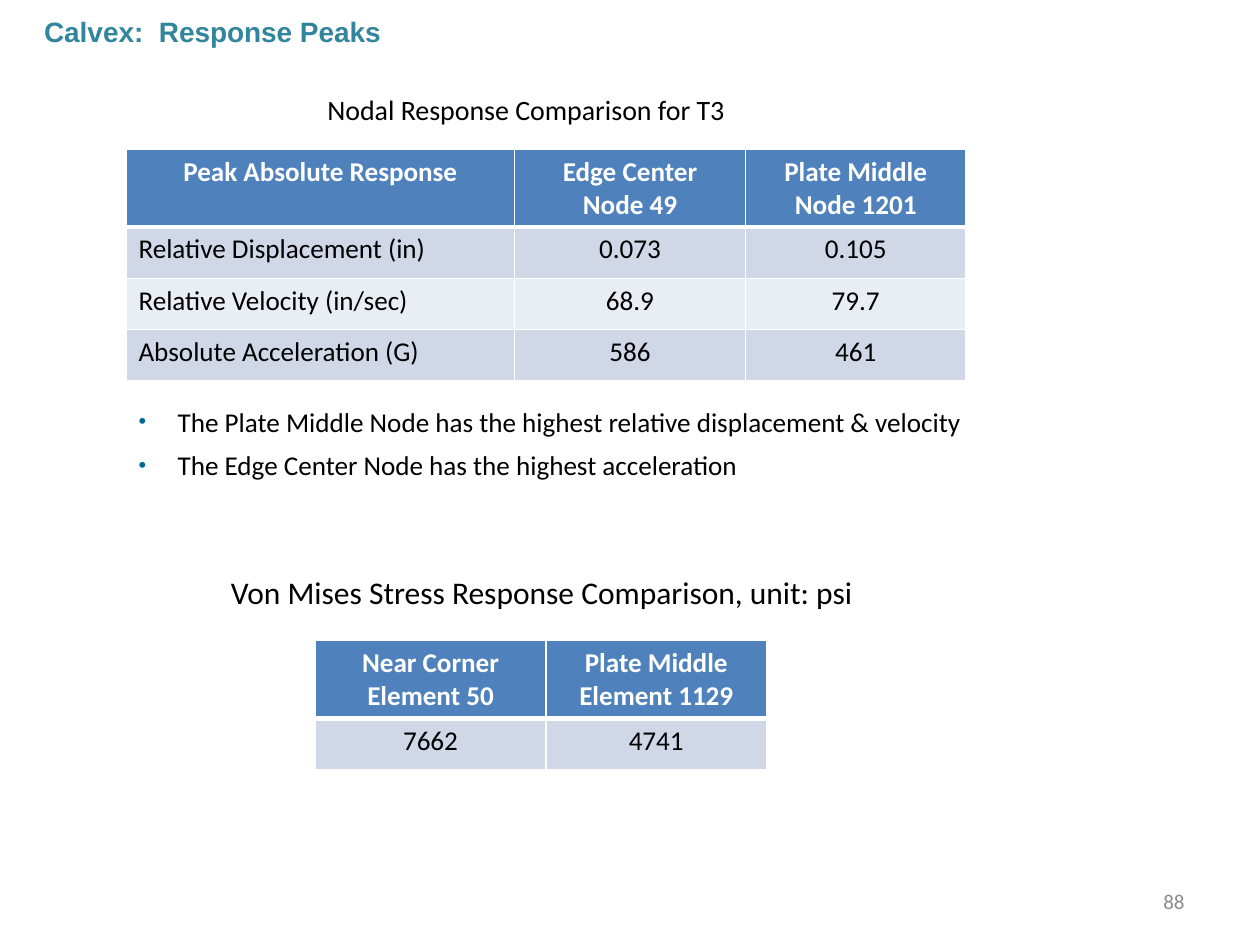
from lxml import etree
from pptx import Presentation
from pptx.dml.color import RGBColor
from pptx.enum.text import MSO_ANCHOR, MSO_AUTO_SIZE, PP_ALIGN
from pptx.oxml.ns import qn
from pptx.util import Inches, Pt

TEAL = RGBColor(0x31, 0x85, 0x9C)
BLUE = RGBColor(0x4F, 0x81, 0xBD)
BAND = RGBColor(0xD0, 0xD8, 0xE8)
PALE = RGBColor(0xE9, 0xED, 0xF4)
GRAY = RGBColor(0x8C, 0x8C, 0x8C)
DOT = RGBColor(0x00, 0x66, 0x99)
WHITE = RGBColor(0xFF, 0xFF, 0xFF)
BLACK = RGBColor(0, 0, 0)

# Grid: 120 columns by 90 rows
COLS, ROWS = 120, 90


class Deck:
    font = "Calibri"
    size = 15.5

    def __init__(self):
        self.prs = Presentation()
        self.prs.slide_width = Inches(10)
        self.prs.slide_height = Inches(7.5)
        self.slide = self.prs.slides.add_slide(self.prs.slide_layouts[1])

    def across(self, n):
        return round(self.prs.slide_width * n / COLS)

    def down(self, n):
        return round(self.prs.slide_height * n / ROWS)

    def area(self, x, y, w, h):
        return self.across(x), self.down(y), self.across(w), self.down(h)

    def run(self, para, text, size=None, color=BLACK, bold=False, font=None):
        run = para.add_run()
        run.text = text
        run.font.name = font or self.font
        run.font.size = Pt(size or self.size)
        run.font.bold = bold
        run.font.color.rgb = color

    def place(self, shape, box):
        shape.left, shape.top, shape.width, shape.height = self.area(*box)
        frame = shape.text_frame
        frame.auto_size = MSO_AUTO_SIZE.NONE
        frame.vertical_anchor = MSO_ANCHOR.TOP
        frame.word_wrap = True
        return frame

    def title(self, text, box):
        para = self.place(self.slide.shapes.title, box).paragraphs[0]
        para.alignment = PP_ALIGN.LEFT
        para.space_before = para.space_after = Pt(2)
        self.run(para, text, 16, TEAL, True, "Arial")

    def label(self, text, box, size, color=BLACK, align=PP_ALIGN.LEFT,
              anchor=MSO_ANCHOR.TOP, gap=2, wrap=False):
        shape = self.slide.shapes.add_textbox(*self.area(*box))
        frame = shape.text_frame
        frame.word_wrap = wrap
        frame.vertical_anchor = anchor
        para = frame.paragraphs[0]
        para.alignment = align
        para.space_before = para.space_after = Pt(gap)
        self.run(para, text, size, color)

    def list(self, items, box):
        frame = self.place(self.slide.placeholders[1], box)
        for i, text in enumerate(items):
            para = frame.add_paragraph() if i else frame.paragraphs[0]
            para.space_before = Pt(6)
            self.run(para, text)
            self.bullet(para)

    def bullet(self, para):
        props = para._p.get_or_add_pPr()
        props.set("marL", str(Inches(0.31)))
        props.set("indent", str(-Inches(0.31)))
        tint = etree.SubElement(props, qn("a:buClr"))
        etree.SubElement(tint, qn("a:srgbClr"), val=str(DOT))
        etree.SubElement(props, qn("a:buSzPct"), val="80000")
        etree.SubElement(props, qn("a:buFont"), typeface="Arial")
        etree.SubElement(props, qn("a:buChar"), char="•")

    def table(self, data, x, y, widths, head=7.3, row=4.9):
        high = head + row * (len(data) - 1)
        box = self.area(x, y, sum(widths), high)
        grid = self.slide.shapes.add_table(len(data), len(widths), *box).table
        for col, wide in zip(grid.columns, widths):
            col.width = self.across(wide)
        for r, line in enumerate(data):
            grid.rows[r].height = self.down(row if r else head)
            fill = (PALE if r % 2 == 0 else BAND) if r else BLUE
            # The rule under the heading row is thick
            top, low = 3 if r == 1 else 1, 1 if r else 3
            for c, text in enumerate(line):
                cell = grid.cell(r, c)
                self.edge(cell, top, low)
                self.cell(cell, text, fill, r == 0)

    def edge(self, cell, top, low):
        props = cell._tc.get_or_add_tcPr()
        for side, wide in (("L", 1), ("R", 1), ("T", top), ("B", low)):
            line = etree.SubElement(props, qn("a:ln" + side), w=str(Pt(wide)))
            fill = etree.SubElement(line, qn("a:solidFill"))
            etree.SubElement(fill, qn("a:srgbClr"), val=str(WHITE))

    def cell(self, cell, text, fill, head):
        cell.fill.solid()
        cell.fill.fore_color.rgb = fill
        # Words in the body are left, headings and numbers are centred
        mid = head or not text[0].isalpha()
        for i, part in enumerate(text.split("\n")):
            frame = cell.text_frame
            para = frame.add_paragraph() if i else frame.paragraphs[0]
            para.alignment = PP_ALIGN.CENTER if mid else PP_ALIGN.LEFT
            self.run(para, part, color=WHITE if head else BLACK, bold=head)


def main():
    deck = Deck()

    # Title and page number
    deck.title("Calvex:  Response Peaks", (3, 0.8, 98, 4.4))
    deck.label("88", (86, 83.4, 28, 4.8), 12, GRAY, PP_ALIGN.RIGHT,
               MSO_ANCHOR.MIDDLE, 0, True)

    # Nodal response
    deck.label("Nodal Response Comparison for T3", (30, 8.2, 41.5, 4.4), 16)
    deck.table([
        ("Peak Absolute Response", "Edge Center\nNode 49",
         "Plate Middle\nNode 1201"),
        ("Relative Displacement (in)", "0.073", "0.105"),
        ("Relative Velocity (in/sec)", "68.9", "79.7"),
        ("Absolute Acceleration (G)", "586", "461"),
    ], 12, 14.2, (37, 22, 21))
    deck.list([
        "The Plate Middle Node has the highest relative displacement"
        " & velocity",
        "The Edge Center Node has the highest acceleration",
    ], (12, 38, 93, 8.6))

    # Stress response
    deck.label("Von Mises Stress Response Comparison, unit: psi",
               (20.8, 54, 62.3, 4.8), 18)
    deck.table([
        ("Near Corner\nElement 50", "Plate Middle\nElement 1129"),
        ("7662", " 4741 "),
    ], 30, 61, (22, 21))

    deck.prs.save("out.pptx")


if __name__ == "__main__":
    main()
